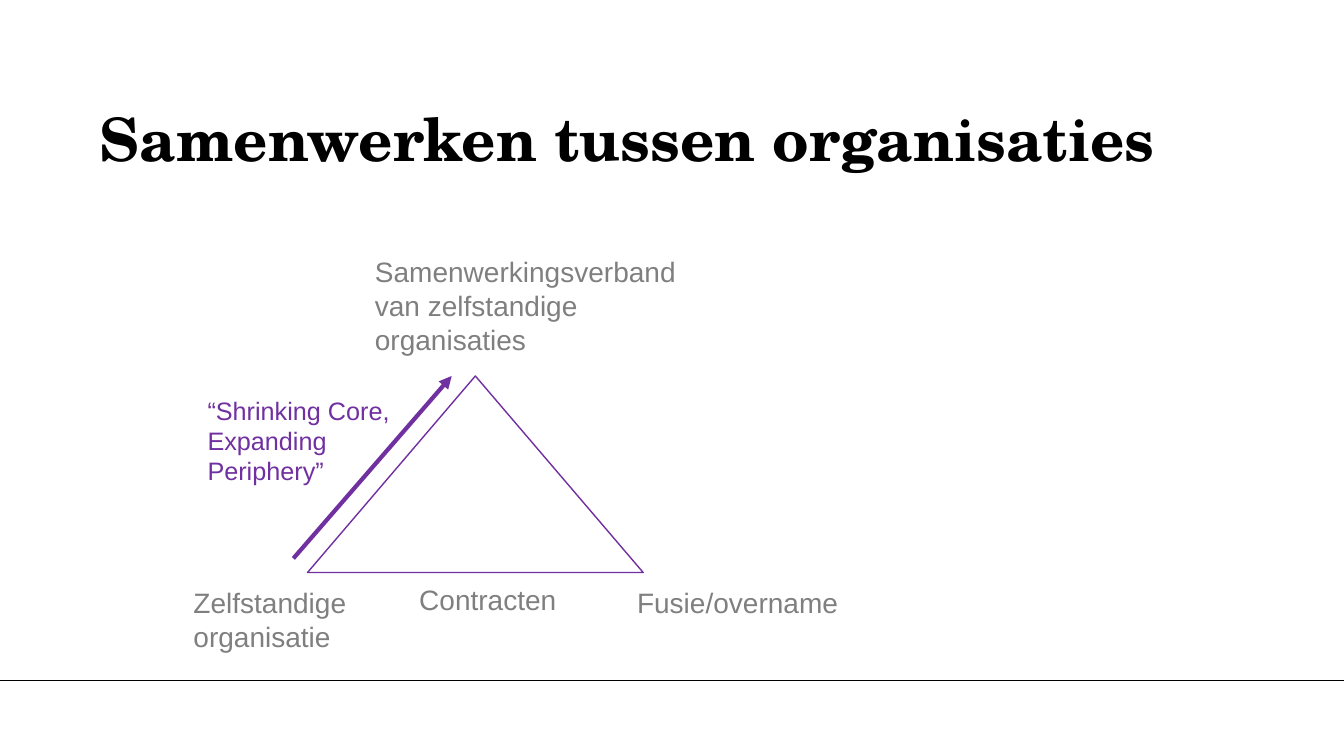
from lxml.etree import SubElement
from pptx import Presentation
from pptx.dml.color import RGBColor
from pptx.enum.shapes import MSO_CONNECTOR as Conn, MSO_SHAPE as Shape
from pptx.enum.text import MSO_ANCHOR as Anchor, MSO_AUTO_SIZE as Fit, PP_ALIGN as Align
from pptx.oxml.ns import qn
from pptx.util import Pt

PX = 9144  # 100 px to the inch
PURPLE, GREY, BLACK = "7030A0", "7F7F7F", "000000"


def color(code):
    return RGBColor.from_string(code)


def emu(*px):
    return [n * PX for n in px]


class Board:
    sans, serif = "Arial", "TeX Gyre Schola"

    def __init__(self, deck):
        self.slide = deck.slides.add_slide(deck.slide_layouts[5])
        self.shapes = self.slide.shapes

    def run(self, par, text, size, code, face, bold=False):
        run = par.add_run()
        run.text = text
        font = run.font
        font.name, font.size, font.bold = face, Pt(size), bold
        font.color.rgb = color(code)

    def title(self, text, box):
        head = self.shapes.title
        head.left, head.top, head.width, head.height = emu(*box)
        frame = head.text_frame
        frame.word_wrap, frame.auto_size = True, Fit.NONE
        frame.vertical_anchor = Anchor.TOP
        par = frame.paragraphs[0]
        par.alignment, par.line_spacing, par.space_before = Align.LEFT, 0.9, Pt(0)
        self.run(par, text, 42.7, BLACK, self.serif, True)

    def label(self, lines, box, code=GREY, size=20):
        frame = self.shapes.add_textbox(*emu(*box)).text_frame
        frame.word_wrap, frame.auto_size = True, Fit.SHAPE_TO_FIT_TEXT
        par = frame.paragraphs[0]
        for i, line in enumerate(lines):
            if i:
                par.add_line_break()
            self.run(par, line, size, code, self.sans)

    def outline(self, kind, box, code, width):
        shape = self.shapes.add_shape(kind, *emu(*box))
        shape.shadow.inherit = False
        shape.fill.background()
        shape.line.color.rgb, shape.line.width = color(code), Pt(width)

    def line(self, ends, code, width, arrow=False):
        link = self.shapes.add_connector(Conn.STRAIGHT, *emu(*ends))
        link.line.color.rgb, link.line.width = color(code), Pt(width)
        if arrow:
            SubElement(link.line._get_or_add_ln(), qn("a:tailEnd"), type="triangle")
        SubElement(link._element.spPr, qn("a:effectLst"))


def main():
    deck = Presentation()
    deck.slide_width, deck.slide_height = emu(1333, 750)
    board = Board(deck)

    # Title and footer rule
    board.title("Samenwerken tussen organisaties", (89, 104, 1165, 93))
    board.line((0, 675, 1333, 675), BLACK, 0.5)

    # Triangle with its corner and base labels
    board.outline(Shape.ISOSCELES_TRIANGLE, (305, 373, 333, 195), PURPLE, 1)
    board.label(["Fusie/overname"], (622, 576, 227, 44))
    board.label(["Zelfstandige", "organisatie"], (182, 576, 202, 77))
    board.label(["Samenwerkingsverband van zelfstandige organisaties"],
                (362, 248, 327, 111))
    board.label(["Contracten"], (406, 573, 227, 44))

    # Arrow along the left side
    board.line((291, 554, 448, 373), PURPLE, 3, arrow=True)
    board.label(["“Shrinking Core,", "Expanding Periphery”"],
                (196, 387, 231, 101), PURPLE, 18)

    deck.save("out.pptx")


if __name__ == "__main__":
    main()
